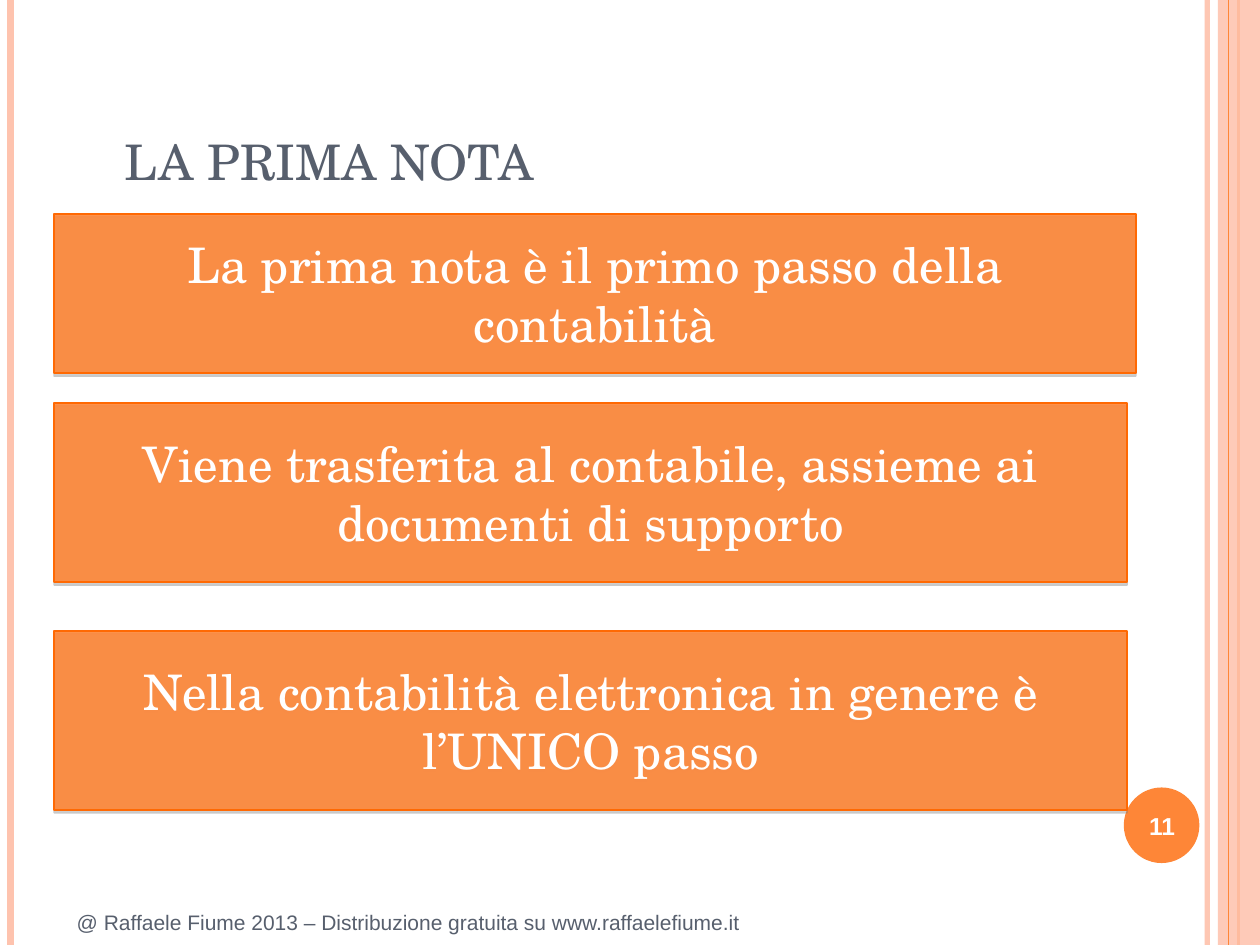
from lxml import etree
from pptx import Presentation
from pptx.dml.color import RGBColor
from pptx.enum.shapes import MSO_CONNECTOR, MSO_SHAPE
from pptx.enum.text import MSO_ANCHOR as Anchor, PP_ALIGN as Align
from pptx.oxml.ns import qn
from pptx.util import Pt

PEACH = RGBColor(0xFE, 0xC3, 0xAE)
ORANGE = RGBColor(0xFE, 0x86, 0x37)
DEEP_ORANGE = RGBColor(0xFF, 0x69, 0x03)
SLATE = RGBColor(0x57, 0x5F, 0x6D)
WHITE = RGBColor(0xFF, 0xFF, 0xFF)
SERIF, SANS = "TeX Gyre Schola", "Arial"
WIDTH, HEIGHT = 720, 540

prs = Presentation()
prs.slide_width, prs.slide_height = Pt(WIDTH), Pt(HEIGHT)
slide = prs.slides.add_slide(prs.slide_layouts[6])
shapes = slide.shapes


def write(shape, text, font, size, color, align=Align.LEFT, anchor=Anchor.MIDDLE, before=0.2):
    frame = shape.text_frame
    frame.text = text
    frame.word_wrap = True
    frame.vertical_anchor = anchor
    paragraph = frame.paragraphs[0]
    paragraph.alignment = align
    paragraph.space_before = Pt(size * before)
    style = paragraph.runs[0].font
    style.name, style.size, style.color.rgb = font, Pt(size), color
    return style


def set_alpha(owner, percent):
    color = next(owner.iter(qn("a:srgbClr")))
    etree.SubElement(color, qn("a:alpha")).set("val", str(percent * 1000))


# Vertical stripes at both edges, with the pale band under the last one
for x, color, weight, opacity in [
    (689.9, PEACH, 3, 93),
    (6, PEACH, 4.5, 100),
    (707.8, ORANGE, 1.5, 100),
    (702, ORANGE, 0.75, 100),
]:
    if weight == 0.75:
        band = shapes.add_shape(MSO_SHAPE.RECTANGLE, Pt(696), 0, Pt(24), Pt(HEIGHT))
        band.shadow.inherit = False
        band.fill.solid()
        band.fill.fore_color.rgb = PEACH
        band.line.fill.background()
        set_alpha(band.fill._xPr, 87)
    stripe = shapes.add_connector(MSO_CONNECTOR.STRAIGHT, Pt(x), 0, Pt(x), Pt(HEIGHT))
    stripe.line.color.rgb = color
    stripe.line.width = Pt(weight)
    properties = stripe._element.spPr
    if opacity < 100:
        set_alpha(properties, opacity)
    etree.SubElement(properties, qn("a:effectLst"))

# Page number disc
disc = shapes.add_shape(MSO_SHAPE.OVAL, Pt(642.2), Pt(450), Pt(43.2), Pt(43.2))
disc.shadow.inherit = False
disc.fill.solid()
disc.fill.fore_color.rgb = ORANGE
disc.line.fill.background()

# Footer, title and page number
footer = shapes.add_textbox(Pt(36.8), Pt(514), Pt(590), Pt(26))
write(footer, "@ Raffaele Fiume 2013 – Distribuzione gratuita su www.raffaelefiume.it", SANS, 12, SLATE)
title = shapes.add_textbox(Pt(64), Pt(58.3), Pt(630), Pt(54))
write(title, "LA PRIMA NOTA", SERIF, 28, SLATE, anchor=Anchor.BOTTOM, before=0)
page_number = shapes.add_textbox(Pt(640), Pt(451.4), Pt(48), Pt(41))
write(page_number, "11", SANS, 14, WHITE, Align.CENTER).bold = True

# Three statements
for top, width, height, statement in [
    (122.4, 618, 91, "La prima nota è il primo passo della contabilità"),
    (230.4, 613, 102.4, "Viene trasferita al contabile, assieme ai documenti di supporto"),
    (360.5, 613, 102.4, "Nella contabilità elettronica in genere è l’UNICO passo"),
]:
    box = shapes.add_shape(MSO_SHAPE.RECTANGLE, Pt(31), Pt(top), Pt(width), Pt(height))
    box.fill.solid()
    box.fill.fore_color.rgb = ORANGE
    set_alpha(box.fill._xPr, 90)
    box.line.color.rgb = DEEP_ORANGE
    box.line.width = Pt(1)
    write(box, statement, SERIF, 28, WHITE, Align.CENTER)

    # Thin grey shadow straight below
    box.shadow.inherit = False
    effects = box._element.spPr.find(qn("a:effectLst"))
    shadow = etree.SubElement(effects, qn("a:outerShdw"), blurRad="0", dist=str(Pt(1.6)),
                              dir="5400000", rotWithShape="0")
    etree.SubElement(shadow, qn("a:srgbClr"), val="808080")
    set_alpha(shadow, 42)

prs.save("out.pptx")
